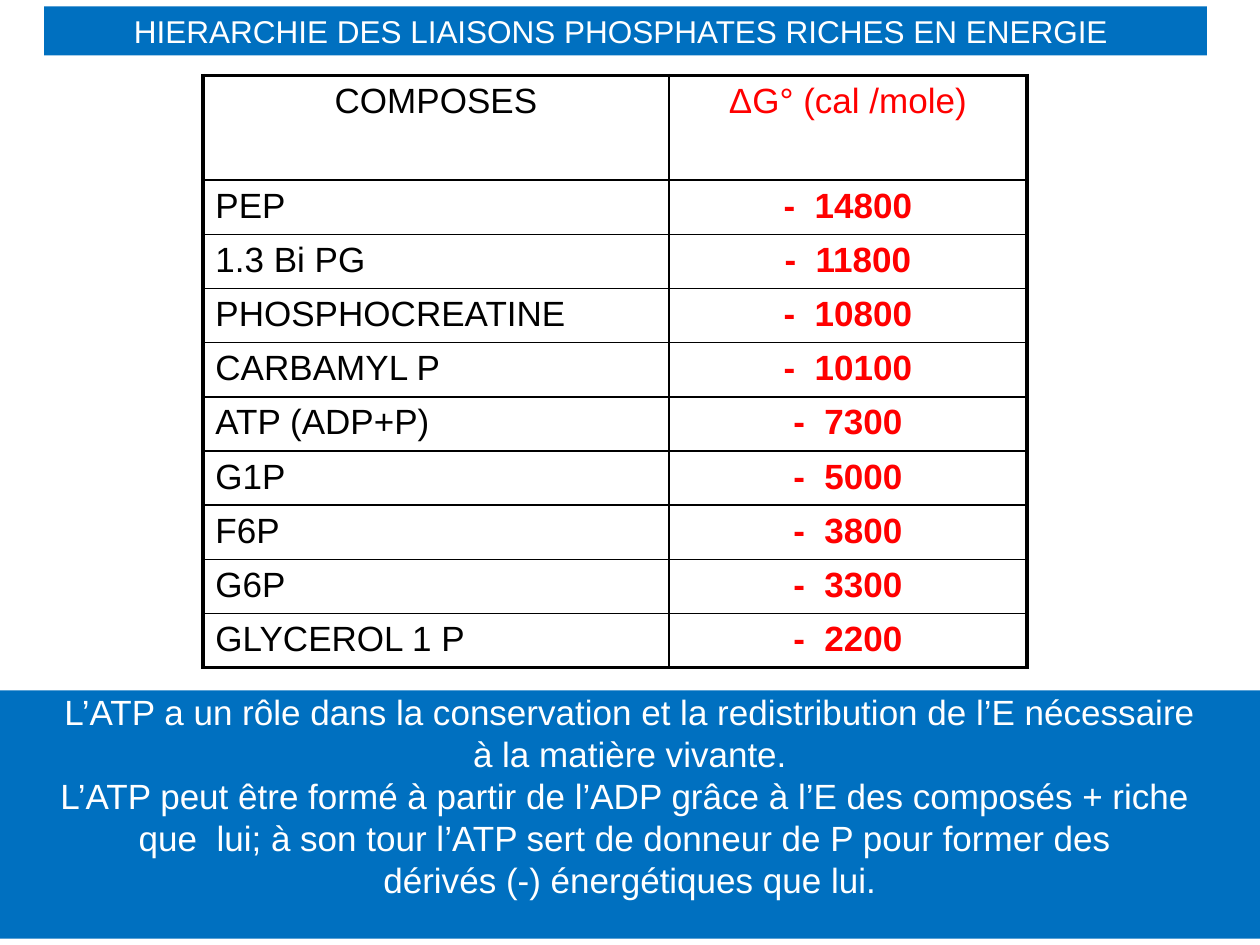
from lxml.etree import SubElement
from pptx import Presentation
from pptx.dml.color import RGBColor
from pptx.enum.shapes import MSO_SHAPE
from pptx.enum.text import MSO_ANCHOR, PP_ALIGN
from pptx.oxml.ns import qn
from pptx.util import Inches, Pt

COLORS = {"band": "0070C0", "white": "FFFFFF", "black": "000000", "red": "FF0000"}
THIN, THICK = 1, 2.25

TITLE = "HIERARCHIE DES LIAISONS PHOSPHATES RICHES EN ENERGIE "
SUMMARY = [
    " L’ATP a un rôle dans la conservation et la redistribution de l’E nécessaire ",
    "à la matière vivante.",
    "L’ATP peut être formé à partir de l’ADP grâce à l’E des composés + riche ",
    "que  lui; à son tour l’ATP sert de donneur de P pour former des ",
    "dérivés (-) énergétiques que lui.",
]
ROWS = [
    ("COMPOSES", "ΔG° (cal /mole)"),
    ("PEP", "-  14800"),
    ("1.3 Bi PG", "-  11800"),
    ("PHOSPHOCREATINE", "-  10800"),
    ("CARBAMYL P", "-  10100"),
    ("ATP (ADP+P)", "-  7300"),
    ("G1P", "-  5000"),
    ("F6P", "-  3800"),
    ("G6P", "-  3300"),
    ("GLYCEROL 1 P", "-  2200"),
]


def style(p, size, color, align=PP_ALIGN.CENTER, bold=False):
    p.alignment = align
    p.font.name = "Arial"
    p.font.size = Pt(size)
    p.font.bold = bold
    p.font.color.rgb = RGBColor.from_string(COLORS[color])


def add_border(cell, side, width):
    ln = SubElement(cell._tc.get_or_add_tcPr(), qn(f"a:ln{side}"), w=str(Pt(width)))
    fill = SubElement(ln, qn("a:solidFill"))
    SubElement(fill, qn("a:srgbClr"), val=COLORS["black"])


prs = Presentation()
prs.slide_width, prs.slide_height = Inches(10), Inches(7.5)
s = prs.slides.add_slide(prs.slide_layouts[6])

# Table of compounds and their free energy
col_widths = [3.7, 2.84]
header_height, row_height = 0.83, 0.43
table_height = header_height + row_height * (len(ROWS) - 1)
table = s.shapes.add_table(
    len(ROWS), len(col_widths), Inches(1.61), Inches(0.6),
    Inches(sum(col_widths)), Inches(table_height),
).table
table.first_row = table.horz_banding = False
for column, width in zip(table.columns, col_widths):
    column.width = Inches(width)

for r, texts in enumerate(ROWS):
    table.rows[r].height = Inches(row_height if r else header_height)
    for c, text in enumerate(texts):
        cell = table.cell(r, c)
        outer = {"L": c == 0, "R": c == 1, "T": r == 0, "B": r == len(ROWS) - 1}
        for side, is_outer in outer.items():
            add_border(cell, side, THICK if is_outer else THIN)
        cell.fill.background()
        cell.text = text
        is_name = c == 0 and r > 0
        style(
            cell.text_frame.paragraphs[0], 20, "red" if c else "black",
            PP_ALIGN.LEFT if is_name else PP_ALIGN.CENTER, bold=c == 1 and r > 0,
        )

# Title band above the table, summary band below it
bands = [
    ((0.35, 0.05, 9.23, 0.39), [TITLE], 18, MSO_ANCHOR.MIDDLE),
    ((0, 5.48, 10, 1.97), SUMMARY, 20, MSO_ANCHOR.TOP),
]
for box, lines, size, anchor in bands:
    sp = s.shapes.add_shape(MSO_SHAPE.RECTANGLE, *map(Inches, box))
    sp.shadow.inherit = False
    sp.fill.solid()
    sp.fill.fore_color.rgb = RGBColor.from_string(COLORS["band"])
    sp.line.fill.background()
    tf = sp.text_frame
    tf.word_wrap = False
    tf.vertical_anchor = anchor
    tf.margin_top = tf.margin_bottom = 0
    for i, line in enumerate(lines):
        p = tf.add_paragraph() if i else tf.paragraphs[0]
        p.text = line
        style(p, size, "white")

prs.save("out.pptx")
